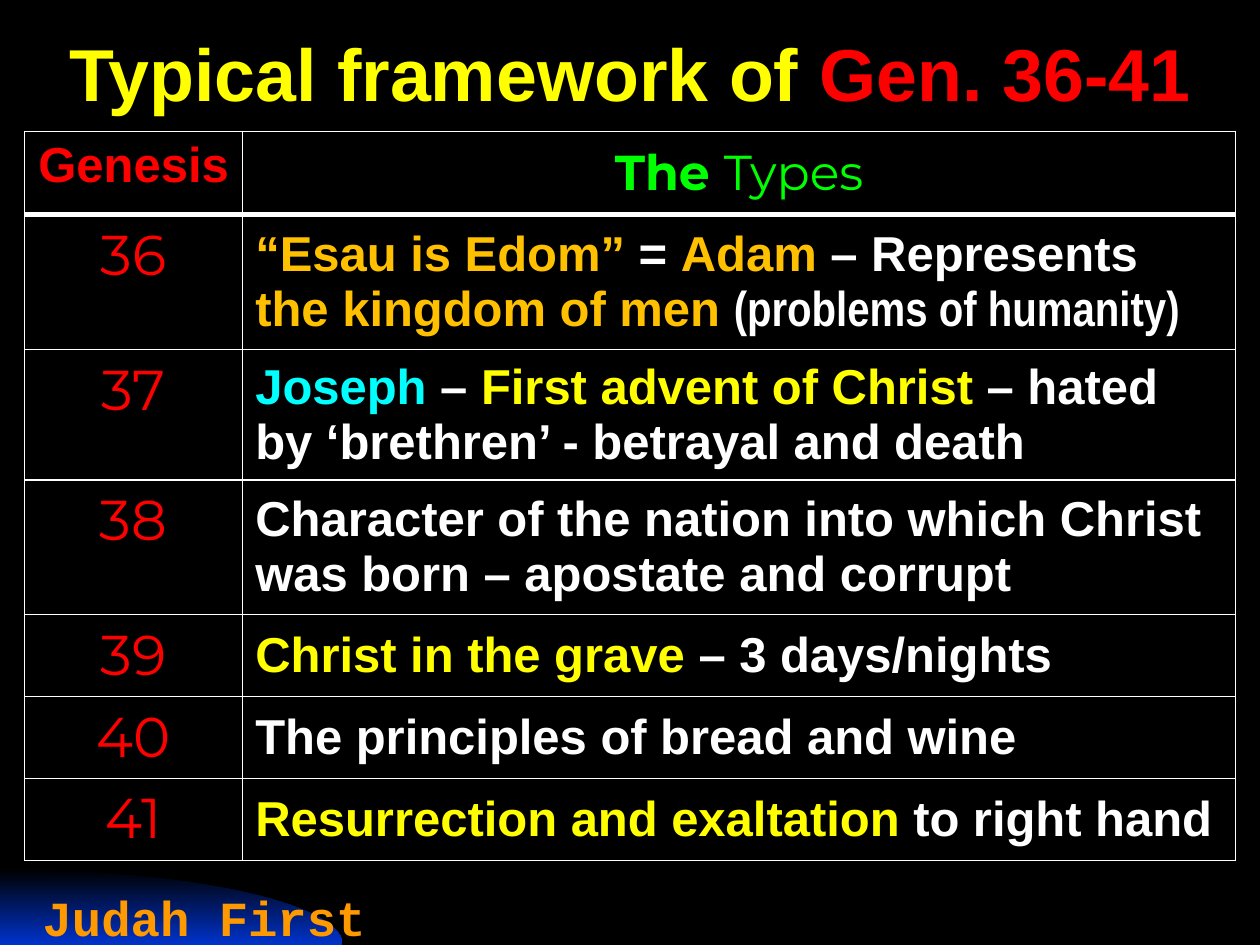
import dataclasses

import lxml.etree
import pptx
import pptx.dml.color
import pptx.enum.text
import pptx.oxml.ns
import pptx.util

ALIGN = pptx.enum.text.PP_ALIGN
ANCHOR = pptx.enum.text.MSO_ANCHOR


@dataclasses.dataclass(frozen=True)
class Theme:
    """Colours, fonts and type sizes of the slide."""
    black: str = "000000"
    white: str = "FFFFFF"
    yellow: str = "FFFF00"
    red: str = "FF0000"
    green: str = "00FF00"
    gold: str = "FFC000"
    cyan: str = "00FFFF"
    orange: str = "FF9900"
    blue: str = "0033CC"
    sans: str = "Arial"
    narrow: str = "Arial Narrow"
    mono: str = "Courier New"
    display: str = "Montserrat"
    title: int = 42
    chapter: int = 32
    body: int = 28
    rule: int = 1
    header_rule: int = 3


THEME = Theme()
CHAPTER = {"size": THEME.chapter, "font": THEME.display, "bold": False}
COLUMNS = (1.73, 7.87)
ROWS = (0.66, 1.07, 0.97, 1.07, 0.65, 0.65, 0.65)
HEADER = (
    [("Genesis", THEME.red, {})],
    [("The ", THEME.green, {"font": THEME.display}),
     ("Types", THEME.green, {"font": THEME.display, "bold": False})],
)
TYPES = {
    "36": [("“Esau is Edom”", THEME.gold, {}), (" = ", THEME.white, {}),
           ("Adam", THEME.gold, {}), (" – Represents ", THEME.white, {}),
           ("the kingdom of men ", THEME.gold, {}),
           ("(problems of humanity)", THEME.white, {"font": THEME.narrow})],
    "37": [("Joseph", THEME.cyan, {}), (" – ", THEME.white, {}),
           ("First advent of Christ ", THEME.yellow, {}),
           ("– hated by ‘brethren’ - betrayal and death", THEME.white, {})],
    "38": [("Character of the nation into which Christ was born – apostate and corrupt",
            THEME.white, {})],
    "39": [("Christ in the grave ", THEME.yellow, {}), ("– 3 days/nights", THEME.white, {})],
    "40": [("The principles of bread and wine", THEME.white, {})],
    "41": [("Resurrection and exaltation ", THEME.yellow, {}),
           ("to right hand", THEME.white, {})],
}


def rgb(value):
    """Return the colour object for a hex value."""
    return pptx.dml.color.RGBColor.from_string(value)


def assign(target, formats):
    """Set every attribute named in the formats."""
    for name, value in formats.items():
        setattr(target, name, value)


def write(frame, runs, size=THEME.body, font=THEME.sans, **paragraph_formats):
    """Write coloured runs into the first paragraph of a text frame."""
    paragraph = frame.paragraphs[0]
    assign(paragraph, paragraph_formats)
    for text, colour, changes in runs:
        look = {"size": size, "font": font, "bold": True, **changes}
        run = paragraph.add_run()
        run.text = text
        assign(run.font, {"size": pptx.util.Pt(look["size"]), "name": look["font"],
                          "bold": look["bold"]})
        run.font.color.rgb = rgb(colour)


def rule_cell(cell, top, bottom):
    """Draw the four borders of a table cell."""
    properties = cell._tc.get_or_add_tcPr()
    widths = {"lnL": THEME.rule, "lnR": THEME.rule, "lnT": top, "lnB": bottom}
    for tag, width in widths.items():
        line = lxml.etree.SubElement(properties, pptx.oxml.ns.qn(f"a:{tag}"),
                                     w=str(pptx.util.Pt(width)))
        fill = lxml.etree.SubElement(line, pptx.oxml.ns.qn("a:solidFill"))
        lxml.etree.SubElement(fill, pptx.oxml.ns.qn("a:srgbClr"), val=THEME.white)


def add_corner(slide, box, steps=40):
    """Place the curved gradient corner in its box."""
    left, top, width, height = box
    builder = slide.shapes.build_freeform(left, top)
    curve = []
    for step in range(1, steps + 1):
        t = step / steps
        across = 3 * t * (1 - t) ** 2 * 0.55 + 3 * t ** 2 * (1 - t) + t ** 3
        down = 3 * t ** 2 * (1 - t) * 0.45 + t ** 3
        curve.append((left + int(width * across), top + int(height * down)))
    builder.add_line_segments(curve + [(left, top + height)])
    corner = builder.convert_to_shape()
    corner.shadow.inherit = False
    corner.line.fill.background()
    corner.fill.gradient()
    corner.fill.gradient_angle = 270
    for stop, colour, position in zip(corner.fill.gradient_stops,
                                      (THEME.black, THEME.blue), (0, 1)):
        stop.color.rgb = rgb(colour)
        stop.position = position


def add_label(slide, box, runs, anchor, **formats):
    """Place one line of text in its box."""
    frame = slide.shapes.add_textbox(*box).text_frame
    assign(frame, {"word_wrap": True, "vertical_anchor": anchor})
    write(frame, runs, **formats)


def add_types_table(slide, box):
    """Place the table of chapters and types in its box."""
    left, top, width, height = box
    rows = [HEADER] + [([(chapter, THEME.red, CHAPTER)], runs)
                       for chapter, runs in TYPES.items()]
    table = slide.shapes.add_table(len(ROWS), len(COLUMNS), left, top, width, height).table
    assign(table, {"first_row": False, "horz_banding": False})
    for column, share in zip(table.columns, COLUMNS):
        column.width = int(width * share / sum(COLUMNS))
    for row, share in zip(table.rows, ROWS):
        row.height = int(height * share / sum(ROWS))
    for r, contents in enumerate(rows):
        for c, runs in enumerate(contents):
            cell = table.cell(r, c)
            rule_cell(cell, THEME.header_rule if r == 1 else THEME.rule,
                      THEME.header_rule if r == 0 else THEME.rule)
            cell.fill.solid()
            cell.fill.fore_color.rgb = rgb(THEME.black)
            cell.vertical_anchor = ANCHOR.MIDDLE if c else ANCHOR.TOP
            write(cell.text_frame, runs,
                  alignment=ALIGN.LEFT if r and c else ALIGN.CENTER)


def main():
    """Build the slide and save it."""
    deck = pptx.Presentation()
    assign(deck, {"slide_width": pptx.util.Inches(10), "slide_height": pptx.util.Inches(7.5)})

    def share(left, top, width, height):
        """Turn percentages of the slide into a box."""
        sides = (deck.slide_width, deck.slide_height) * 2
        return [int(side * part / 100) for side, part in zip(sides, (left, top, width, height))]

    slide = deck.slides.add_slide(deck.slide_layouts[6])
    slide.background.fill.solid()
    slide.background.fill.fore_color.rgb = rgb(THEME.black)
    add_corner(slide, share(0, 92, 27.2, 8))
    add_label(slide, share(0, 1.73, 100, 11.2),
              [("Typical framework of ", THEME.yellow, {}), ("Gen. 36-41", THEME.red, {})],
              ANCHOR.BOTTOM, size=THEME.title, alignment=ALIGN.CENTER, line_spacing=0.8)
    add_label(slide, share(2.4, 94.67, 29.5, 4.67), [("Judah First", THEME.orange, {})],
              ANCHOR.MIDDLE, font=THEME.mono)
    add_types_table(slide, share(1.95, 13.93, 96.1, 76.27))
    deck.save("out.pptx")


if __name__ == "__main__":
    main()
